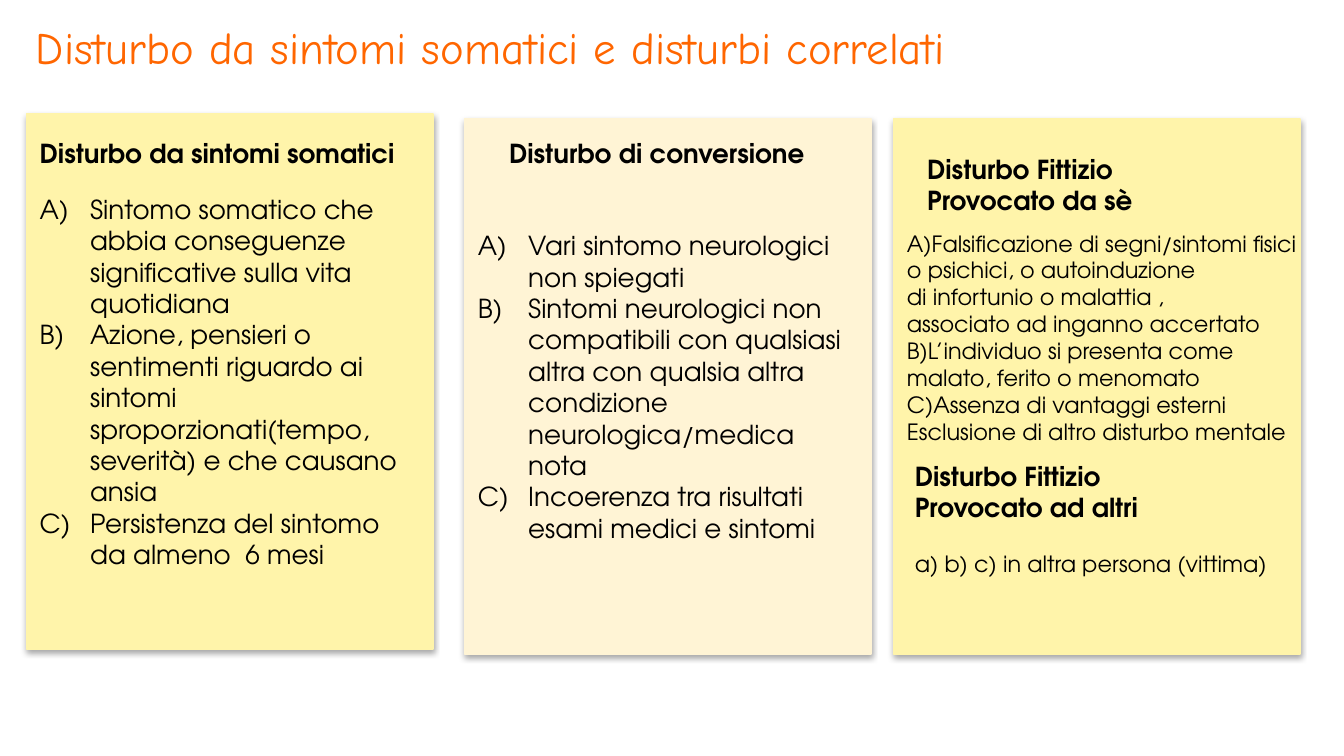
import pptx
import pptx.dml.color
import pptx.enum.shapes
import pptx.enum.text
import pptx.oxml
import pptx.oxml.ns
import pptx.util

Pt = pptx.util.Pt
HUES = {"lemon": "FFF4AA", "cream": "FFF4D5", "ink": "000000", "orange": "FF6600"}
SPACE = pptx.oxml.ns.nsdecls("a")


def tint(name):
    """Return the named colour."""
    return pptx.dml.color.RGBColor.from_string(HUES[name])


def put(frame, text, size=14, bold=False, hue="ink", font="TeX Gyre Adventor", gap=0, list=False):
    """Add one paragraph per line of text to the frame."""
    for line in text.split("\n"):
        para = frame.paragraphs[0]
        if para.runs:
            para = frame.add_paragraph()
        para.alignment = pptx.enum.text.PP_ALIGN.LEFT
        para.space_before = Pt(gap)
        if list:
            props = para._p.get_or_add_pPr()
            props.set("marL", str(Pt(27)))
            props.set("indent", str(Pt(-27)))
            props.append(pptx.oxml.parse_xml(f'<a:buAutoNum {SPACE} type="alphaUcParenR"/>'))
        run = para.add_run()
        run.text = line
        run.font.name = font
        run.font.size = Pt(size)
        run.font.bold = bold
        run.font.color.rgb = tint(hue)


class Deck:
    """Hold the style and the current slide."""

    def __init__(self):
        """Open a deck with one blank slide."""
        self.file = pptx.Presentation()
        self.file.slide_width = Pt(720)
        self.file.slide_height = Pt(405)
        self.slide = self.file.slides.add_slide(self.file.slide_layouts[6])

    def card(self, left, top, hue, text=""):
        """Draw a shadowed card with an optional lettered list."""
        kind = pptx.enum.shapes.MSO_SHAPE.RECTANGLE
        shape = self.slide.shapes.add_shape(kind, Pt(left), Pt(top), Pt(217.8), Pt(286.8))
        shape.fill.solid()
        shape.fill.fore_color.rgb = tint(hue)
        shape.line.color.rgb = tint(hue)
        shape.line.width = Pt(0.75)
        shape.shadow.inherit = False
        glow = shape._element.spPr.find(pptx.oxml.ns.qn("a:effectLst"))
        glow.append(pptx.oxml.parse_xml(
            f'<a:outerShdw {SPACE} blurRad="{Pt(3.1)}" dist="{Pt(1.8)}" dir="5400000" rotWithShape="0">'
            f'<a:srgbClr val="{HUES["ink"]}"><a:alpha val="35000"/></a:srgbClr></a:outerShdw>'))
        if text:
            shape.text_frame.word_wrap = True
            shape.text_frame.vertical_anchor = pptx.enum.text.MSO_ANCHOR.MIDDLE
            put(shape.text_frame, text, list=True)

    def label(self, left, top, width, height, text, wrap=False, **form):
        """Add a text box and return its frame."""
        box = self.slide.shapes.add_textbox(Pt(left), Pt(top), Pt(width), Pt(height))
        frame = box.text_frame
        frame.word_wrap = wrap
        frame.auto_size = pptx.enum.text.MSO_AUTO_SIZE.SHAPE_TO_FIT_TEXT
        put(frame, text, **form)
        return frame


def main():
    """Build and save the slide."""
    deck = Deck()
    deck.card(14.2, 61, "lemon",
              "Sintomo somatico che abbia conseguenze significative sulla vita quotidiana\n"
              "Azione, pensieri o sentimenti riguardo ai sintomi sproporzionati(tempo, severità) e che causano ansia\n"
              "Persistenza del sintomo da almeno  6 mesi")
    deck.card(248.9, 63.7, "cream",
              "Vari sintomo neurologici non spiegati\n"
              "Sintomi neurologici non compatibili con qualsiasi altra con qualsia altra "
              "condizione neurologica/medica nota\n"
              "Incoerenza tra risultati esami medici e sintomi")
    deck.card(478.7, 63.7, "lemon")
    deck.label(489.6, 78.5, 128.2, 41, "Disturbo Fittizio\nProvocato da sè", bold=True)
    other = deck.label(483, 242.9, 206, 70.5, "Disturbo Fittizio\nProvocato ad altri", bold=True)
    put(other, "a) b) c) in altra persona (vittima)", size=12, gap=14.4)
    deck.label(478.8, 119.5, 224, 124,
               "A)Falsificazione di segni/sintomi fisici\n"
               "o psichici, o autoinduzione\n"
               "di infortunio o malattia ,\n"
               "associato ad inganno accertato\n"
               "B)L’individuo si presenta come\n"
               "malato, ferito o menomato\n"
               "C)Assenza di vantaggi esterni\n"
               "Esclusione di altro disturbo mentale", size=12)
    deck.label(265.7, 70, 175, 24.2, "Disturbo di conversione", bold=True)
    deck.label(14.2, 70, 217.8, 24.2, "Disturbo da sintomi somatici", wrap=True, bold=True)
    deck.label(12.2, 7.2, 693.4, 36, "Disturbo da sintomi somatici e disturbi correlati",
               size=24, hue="orange", font="Comic Neue")
    deck.file.save("out.pptx")


if __name__ == "__main__":
    main()
